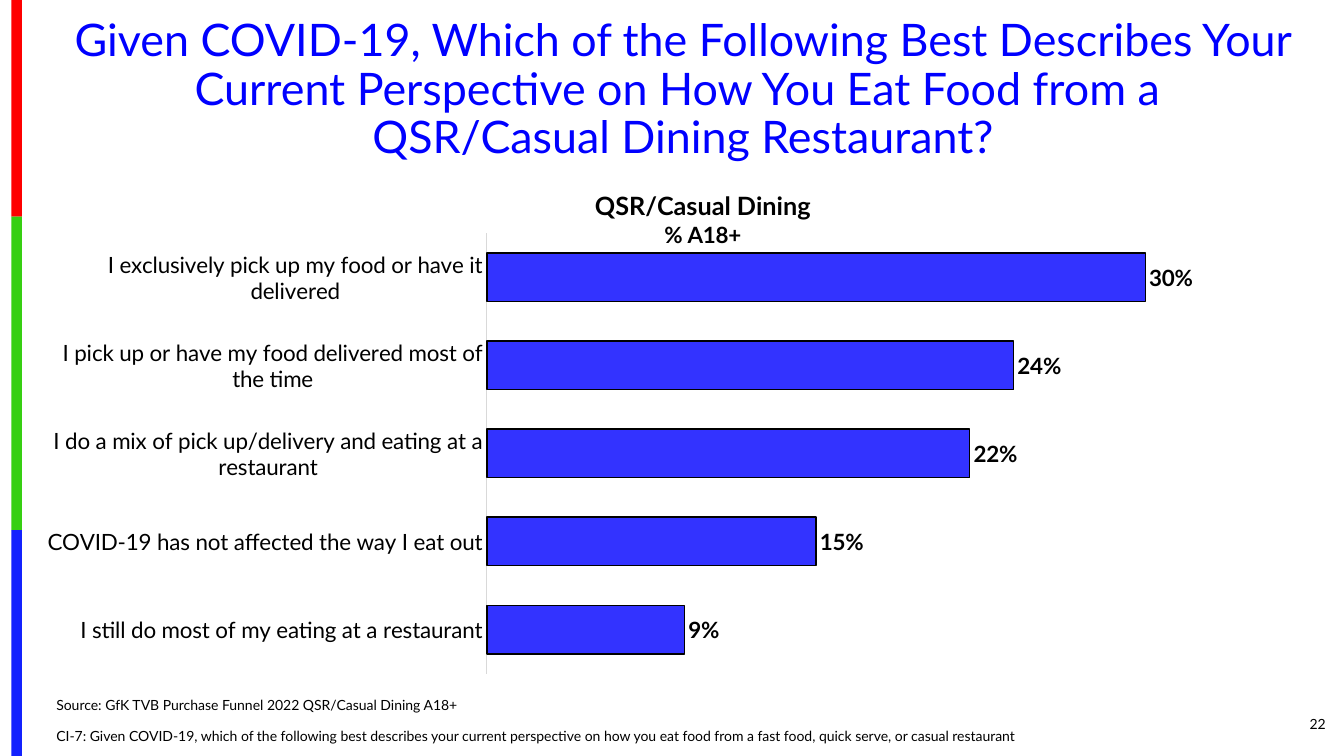
from dataclasses import dataclass

import pptx
import pptx.chart.data
import pptx.dml.color
import pptx.enum.chart
import pptx.enum.shapes
import pptx.enum.text
import pptx.oxml
import pptx.oxml.ns
import pptx.util
from pptx.util import Cm, Pt


def rgb(value):
    return pptx.dml.color.RGBColor.from_string(value)


@dataclass(frozen=True)
class Theme:
    font: str = "Lato"
    ink: str = "000000"
    heading: str = "0000FF"
    bar: str = "3333FF"
    axis: str = "D9D9D9"
    stripe: tuple = ("FE0000", "36CF12", "1322FE")
    heading_size: int = 32
    chart_title_size: int = 18
    label_size: int = 16
    note_size: int = 10


THEME = Theme()
ALIGN = pptx.enum.text.PP_ALIGN
ANCHOR = pptx.enum.text.MSO_ANCHOR

HEADING = ("Given COVID-19, Which of the Following Best Describes Your Current "
           "Perspective on How You Eat Food from a \vQSR/Casual Dining Restaurant?")
ANSWERS = {
    "I still do most of my eating at a restaurant": 0.09,
    "COVID-19 has not affected the way I eat out": 0.15,
    "I do a mix of pick up/delivery and eating at a restaurant": 0.22,
    "I pick up or have my food delivered most of the time": 0.24,
    "I exclusively pick up my food or have it delivered": 0.3,
}
NOTES = [
    "Source: GfK TVB Purchase Funnel 2022 QSR/Casual Dining A18+",
    "CI-7: Given COVID-19, which of the following best describes your current "
    "perspective on how you eat food from a fast food, quick serve, or casual restaurant",
]


def style_font(font, size, color=THEME.ink, bold=False):
    font.name = THEME.font
    font.size = Pt(size)
    font.bold = bold
    font.color.rgb = rgb(color)


def add_stripe(slide, left, top, width, heights):
    """Vertical stripe of stacked colour segments."""
    for color, height in zip(THEME.stripe, heights):
        segment = slide.shapes.add_shape(
            pptx.enum.shapes.MSO_SHAPE.RECTANGLE, left, top, width, height)
        segment.shadow.inherit = False
        segment.fill.solid()
        segment.fill.fore_color.rgb = rgb(color)
        segment.line.fill.background()
        top += height


def add_heading(slide, left, top, width, height):
    heading = slide.shapes.title
    heading.left, heading.top, heading.width, heading.height = left, top, width, height
    frame = heading.text_frame
    frame.text = HEADING
    frame.word_wrap = True
    frame.auto_size = pptx.enum.text.MSO_AUTO_SIZE.NONE
    frame.vertical_anchor = ANCHOR.MIDDLE
    paragraph = frame.paragraphs[0]
    paragraph.alignment = ALIGN.CENTER
    paragraph.line_spacing = 0.9
    for run in paragraph.runs:
        style_font(run.font, THEME.heading_size, THEME.heading)


def place_chart_part(part, index, inner=False, **fractions):
    """Give a chart part a manual layout in fractions of the chart."""
    qn = pptx.oxml.ns.qn
    for old in part.findall(qn("c:layout")):
        part.remove(old)
    target = '<c:layoutTarget val="inner"/>' if inner else ""
    modes = "".join(f'<c:{key}Mode val="edge"/>' for key in ("x", "y"))
    values = "".join(f'<c:{key} val="{value}"/>' for key, value in fractions.items())
    part.insert(index, pptx.oxml.parse_xml(
        f'<c:layout {pptx.oxml.ns.nsdecls("c")}><c:manualLayout>'
        f"{target}{modes}{values}</c:manualLayout></c:layout>"))


def add_answer_chart(slide, left, top, width, height):
    data = pptx.chart.data.CategoryChartData(number_format="0%")
    data.categories = list(ANSWERS)
    data.add_series("Series 1", list(ANSWERS.values()))
    chart = slide.shapes.add_chart(
        pptx.enum.chart.XL_CHART_TYPE.BAR_CLUSTERED, left, top, width, height, data).chart
    style_font(chart.font, THEME.note_size)
    chart.has_legend = False

    # Chart title
    chart.has_title = True
    frame = chart.chart_title.text_frame
    frame.text = "QSR/Casual Dining\n% A18+"
    for paragraph, size in zip(frame.paragraphs, (THEME.chart_title_size, THEME.label_size)):
        paragraph.alignment = ALIGN.CENTER
        style_font(paragraph.runs[0].font, size, bold=True)

    # Axes
    answers_axis, share_axis = chart.category_axis, chart.value_axis
    style_font(answers_axis.tick_labels.font, THEME.label_size)
    answers_axis.major_tick_mark = pptx.enum.chart.XL_TICK_MARK.NONE
    answers_axis.format.line.color.rgb = rgb(THEME.axis)
    answers_axis.format.line.width = Pt(0.75)
    share_axis.visible = False
    share_axis.has_major_gridlines = False
    share_axis.minimum_scale = 0
    share_axis.maximum_scale = 0.35

    # Bars and their values
    plot = chart.plots[0]
    plot.gap_width = 81
    plot.vary_by_categories = False
    bars = plot.series[0]
    bars.format.fill.solid()
    bars.format.fill.fore_color.rgb = rgb(THEME.bar)
    bars.format.line.color.rgb = rgb(THEME.ink)
    bars.format.line.width = Pt(1)
    labels = bars.data_labels
    labels.show_value = True
    labels.number_format = "0%"
    labels.number_format_is_linked = False
    labels.position = pptx.enum.chart.XL_LABEL_POSITION.OUTSIDE_END
    style_font(labels.font, THEME.label_size, bold=True)

    # Positions inside the chart; the title stays clear of the top bar
    qn = pptx.oxml.ns.qn
    chart_root = chart.element.find(qn("c:chart"))
    place_chart_part(chart_root.find(qn("c:title")), 1, x=0.436, y=0.022)
    place_chart_part(chart_root.find(qn("c:plotArea")), 0, inner=True,
                     x=0.352, y=0.115, w=0.614, h=0.857)


def add_note(slide, left, top, width, height, lines, alignment, anchor):
    frame = slide.shapes.add_textbox(left, top, width, height).text_frame
    frame.word_wrap = True
    frame.vertical_anchor = anchor
    frame.text = "\n".join(lines)
    for index, paragraph in enumerate(frame.paragraphs):
        paragraph.alignment = alignment
        paragraph.space_before = Pt(10 if index else 0)
        style_font(paragraph.runs[0].font, THEME.note_size)


def build_survey_slide(deck):
    slide = deck.slides.add_slide(deck.slide_layouts.get_by_name("Title Only"))
    add_stripe(slide, Cm(0.29), Cm(0), Cm(0.26), (Cm(5.46), Cm(7.9), Cm(5.69)))
    add_heading(slide, Cm(1.19), Cm(0.3), Cm(32.05), Cm(3.96))
    add_answer_chart(slide, Cm(1.17), Cm(4.39), Cm(31.52), Cm(12.95))
    add_note(slide, Cm(30.91), Cm(17.73), Cm(2.74), Cm(1.02), ["22"],
             ALIGN.RIGHT, ANCHOR.MIDDLE)
    add_note(slide, Cm(1.17), Cm(17.42), Cm(25.1), Cm(1.47), NOTES,
             ALIGN.LEFT, ANCHOR.TOP)


def main():
    deck = pptx.Presentation()
    deck.slide_width, deck.slide_height = Cm(33.86), Cm(19.05)
    build_survey_slide(deck)
    deck.save("out.pptx")


if __name__ == "__main__":
    main()
